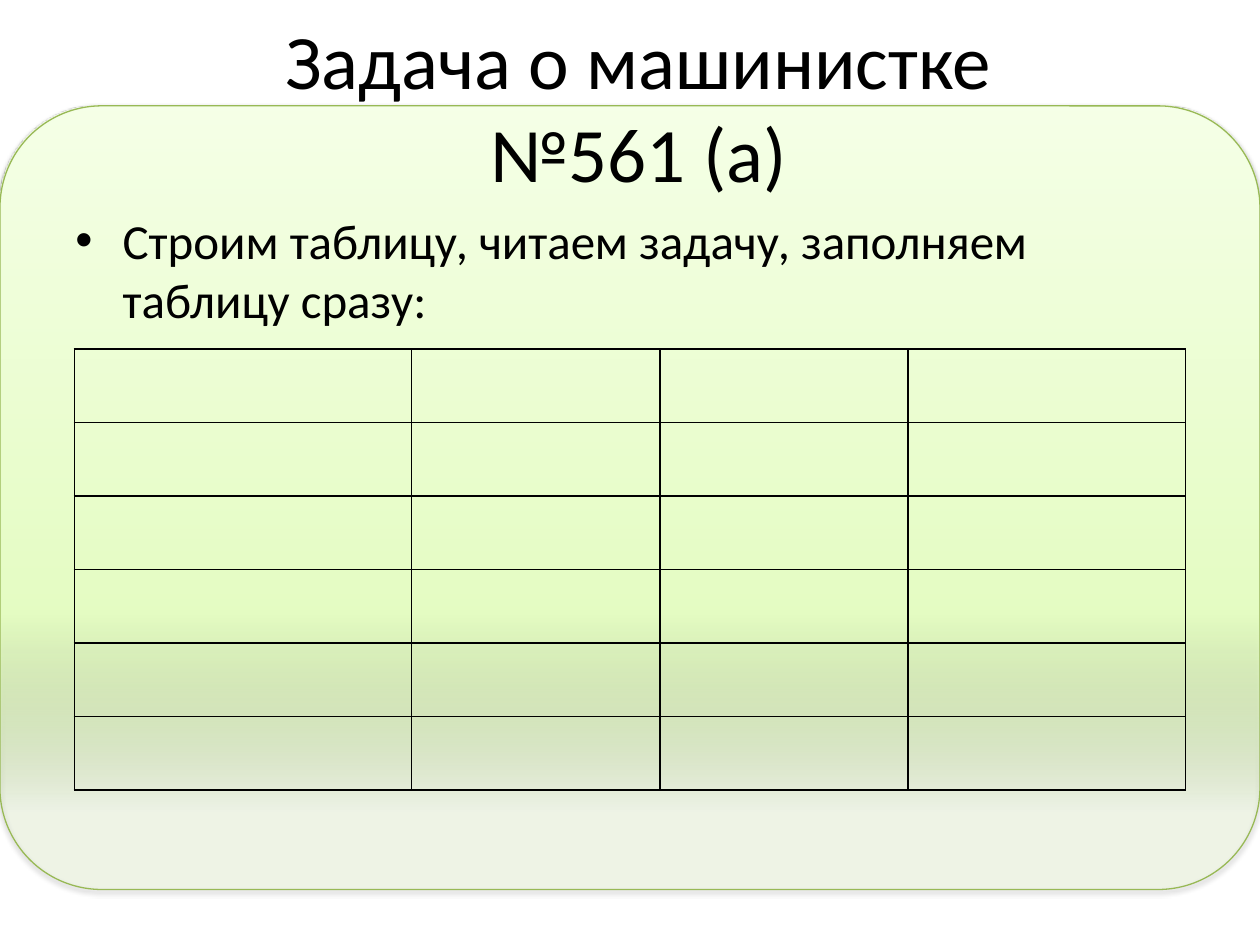
from lxml.etree import SubElement as Sub
from pptx import Presentation
from pptx.dml.color import RGBColor as RGB
from pptx.enum.shapes import MSO_SHAPE as SHAPE
from pptx.enum.text import MSO_ANCHOR as ANCHOR, PP_ALIGN as ALIGN
from pptx.oxml import parse_xml
from pptx.oxml.ns import nsdecls, qn
from pptx.util import Pt

HEX = {"ink": "000000", "edge": "98B955", "low": "DAFDA7", "mid": "E4FCC2", "top": "F5FFE7"}

deck = Presentation()
deck.slide_width, deck.slide_height = Pt(720), Pt(540)
slide = deck.slides.add_slide(deck.slide_layouts[6])

panel = slide.shapes.add_shape(SHAPE.ROUNDED_RECTANGLE, Pt(0), Pt(60.5), Pt(720), Pt(447.8))
panel.adjustments[0] = 0.13
panel.line.color.rgb = RGB.from_string(HEX["edge"])
panel.line.width = Pt(0.75)
stops = ""
for place, tone, alpha in [(10, "low", 14), (35, "mid", 100), (100, "top", 100)]:
    stops += (f'<a:gs pos="{place * 1000}"><a:srgbClr val="{HEX[tone]}">'
              f'<a:alpha val="{alpha * 1000}"/></a:srgbClr></a:gs>')
grad = parse_xml(f'<a:gradFill {nsdecls("a")} rotWithShape="1"><a:gsLst>{stops}</a:gsLst>'
                 '<a:lin ang="16200000" scaled="0"/></a:gradFill>')
props = panel.element.spPr
props.find(qn("a:prstGeom")).addnext(grad)
glow = Sub(props, qn("a:effectLst"))
shade = Sub(glow, qn("a:outerShdw"), blurRad=str(Pt(3.1)), dist=str(Pt(1.6)),
            dir="5400000", rotWithShape="0")
ink = Sub(shade, qn("a:srgbClr"), val=HEX["ink"])
Sub(ink, qn("a:alpha"), val="38000")

texts = [
    ("Строим таблицу, читаем задачу, заполняем таблицу сразу:",
     (36, 116.6, 648, 356.4), 28, ANCHOR.TOP, {"alignment": ALIGN.LEFT, "space_before": Pt(5.6)}),
    ("Задача о машинистке\v№561 (а)",
     (41, -2.2, 648, 124.6), 44, ANCHOR.MIDDLE, {"alignment": ALIGN.CENTER}),
]
paras = []
for words, spot, size, anchor, form in texts:
    frame = slide.shapes.add_textbox(*map(Pt, spot)).text_frame
    frame.word_wrap = True
    frame.vertical_anchor = anchor
    para = frame.paragraphs[0]
    para.text = words
    for key, val in form.items():
        setattr(para, key, val)
    for run in para.runs:
        for key, val in {"name": "Calibri", "size": Pt(size)}.items():
            setattr(run.font, key, val)
        run.font.color.rgb = RGB.from_string(HEX["ink"])
    paras.append(para)

marks = paras[0]._p.get_or_add_pPr()
marks.set("marL", str(Pt(27)))
marks.set("indent", str(Pt(-27)))
Sub(marks, qn("a:buFont"), typeface="Arial")
Sub(marks, qn("a:buChar"), char="•")

wide = [192.8, 141.8, 141.8, 158.6]
rows, tall = 6, 42
table = slide.shapes.add_table(rows, len(wide), Pt(42.5), Pt(199.5),
                               Pt(sum(wide)), Pt(rows * tall)).table
for key in ("first_row", "horz_banding"):
    setattr(table, key, False)
for col, width in zip(table.columns, wide):
    col.width = Pt(width)
for row in table.rows:
    row.height = Pt(tall)
for cell in table.iter_cells():
    edges = cell._tc.get_or_add_tcPr()
    for side in ("lnL", "lnR", "lnT", "lnB"):
        line = Sub(edges, qn(f"a:{side}"), w=str(Pt(1)))
        Sub(Sub(line, qn("a:solidFill")), qn("a:srgbClr"), val=HEX["ink"])
    cell.fill.background()

deck.save("out.pptx")
